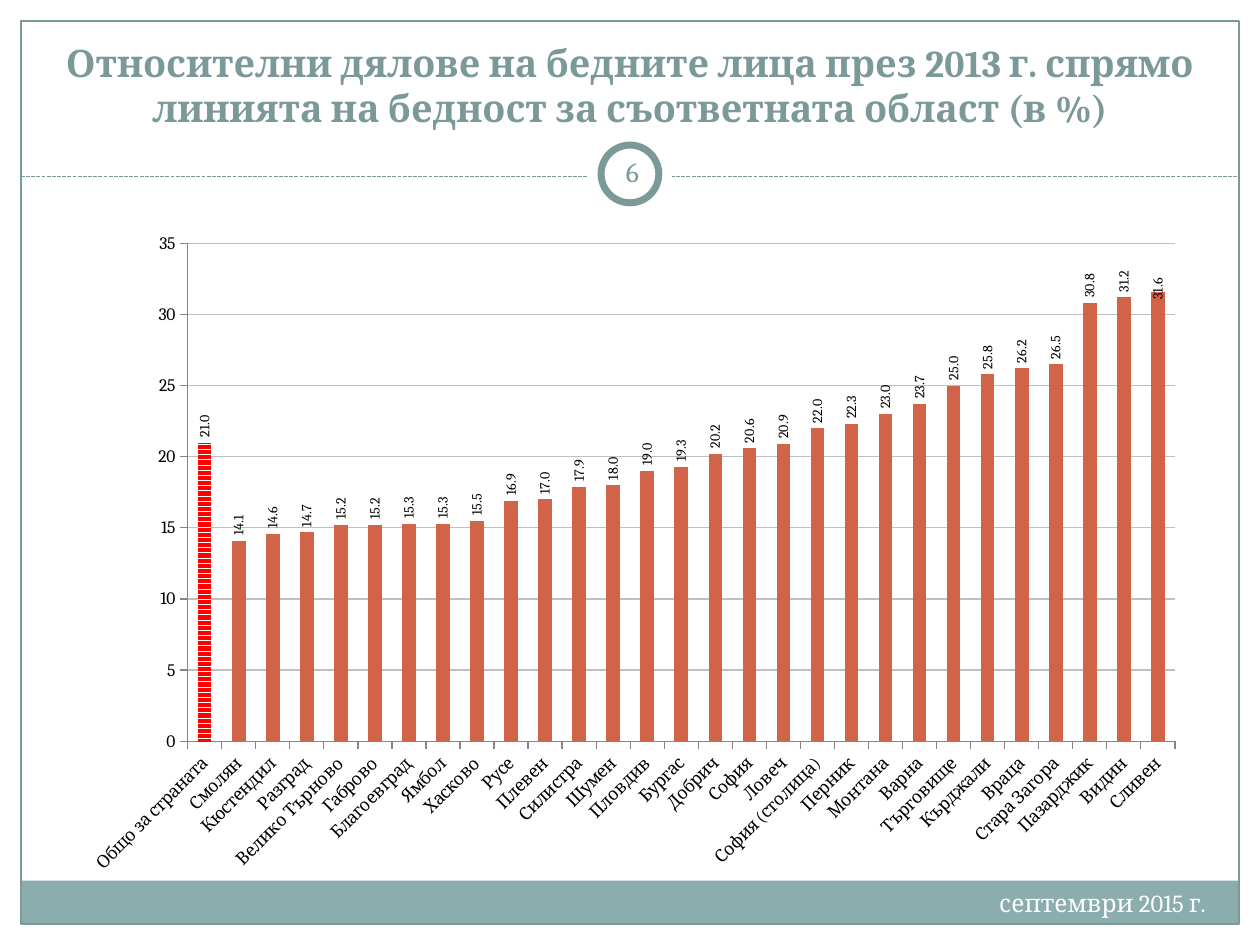
"""Build a slide with a column chart of relative poverty shares by Bulgarian district."""
from dataclasses import dataclass

from lxml import etree
from pptx import Presentation
from pptx.chart import data as chart_data
from pptx.dml.color import RGBColor
from pptx.enum import chart as ch, dml, shapes, text
from pptx.oxml import parse_xml
from pptx.oxml.ns import nsdecls, qn
from pptx.util import Pt

TITLE = ("Относителни дялове на бедните лица през 2013 г. спрямо "
         "линията на бедност за съответната област (в %)")
PAGE_NUMBER = "6"
DATE = "септември 2015 г."
SHARES = [
    ("Общо за страната", 21), ("Смолян", 14.1), ("Кюстендил", 14.6),
    ("Разград", 14.7), ("Велико Търново", 15.2), ("Габрово", 15.2),
    ("Благоевград", 15.3), ("Ямбол", 15.3), ("Хасково", 15.5),
    ("Русе", 16.9), ("Плевен", 17), ("Силистра", 17.9), ("Шумен", 18),
    ("Пловдив", 19), ("Бургас", 19.3), ("Добрич", 20.2), ("София", 20.6),
    ("Ловеч", 20.9), ("София (столица)", 22), ("Перник", 22.3),
    ("Монтана", 23), ("Варна", 23.7), ("Търговище", 25),
    ("Кърджали", 25.8), ("Враца", 26.2), ("Стара Загора", 26.5),
    ("Пазарджик", 30.8), ("Видин", 31.2), ("Сливен", 31.6),
]


@dataclass(frozen=True)
class Theme:
    font: str = "Cambria"
    accent: str = "7C999A"
    band: str = "8CADAE"
    white: str = "FFFFFF"
    black: str = "000000"
    column: str = "D16349"
    total: str = "FF0000"
    grid: str = "BFBFBF"
    axis: str = "868686"
    title_size: float = 21.6
    number_size: float = 16
    date_size: float = 14
    axis_size: float = 10
    label_size: float = 8


THEME = Theme()
WIDTH, HEIGHT, MARGIN = 720, 540, 12
RULE_Y = 100.8
RING_CENTRE = (360, 99.4)


def rgb(value):
    return RGBColor.from_string(value)


def style_font(font, size, color, bold=False):
    font.name, font.size, font.bold = THEME.font, Pt(size), bold
    font.color.rgb = rgb(color)


def style_line(line, color, width=0.75):
    line.color.rgb, line.width = rgb(color), Pt(width)


def add_shape(page, kind, area, fill=None, line=None, width=0.75):
    shape = page.shapes.add_shape(kind, *map(Pt, area))
    shape.shadow.inherit = False
    if fill:
        shape.fill.solid()
        shape.fill.fore_color.rgb = rgb(fill)
    else:
        shape.fill.background()
    if line:
        style_line(shape.line, line, width)
    else:
        shape.line.fill.background()


def add_disc(page, size, **style):
    x, y = RING_CENTRE
    add_shape(page, shapes.MSO_SHAPE.OVAL,
              (x - size / 2, y - size / 2, size, size), THEME.white, **style)


def write(box, words, align, anchor, size, color, bold=False):
    frame = box.text_frame
    frame.word_wrap, frame.vertical_anchor = True, anchor
    frame.text = words
    para = frame.paragraphs[0]
    para.alignment = align
    style_font(para.font, size, color, bold)
    return frame


def add_frame(page):
    rectangle = shapes.MSO_SHAPE.RECTANGLE
    inner = WIDTH - 2 * MARGIN
    add_shape(page, rectangle, (MARGIN, 503.3, inner, 24.5), THEME.band)
    add_shape(page, rectangle, (MARGIN, MARGIN, inner, HEIGHT - 2 * MARGIN),
              line=THEME.accent)
    rule = page.shapes.add_connector(
        shapes.MSO_CONNECTOR.STRAIGHT, Pt(MARGIN), Pt(RULE_Y),
        Pt(WIDTH - MARGIN), Pt(RULE_Y))
    style_line(rule.line, THEME.accent)
    rule.line.dash_style = dml.MSO_LINE.SQUARE_DOT
    etree.SubElement(rule._element.spPr, qn("a:effectLst"))
    add_disc(page, 48)
    add_disc(page, 33, line=THEME.accent, width=4)


def add_texts(page):
    align, anchor = text.PP_ALIGN, text.MSO_ANCHOR
    title = page.shapes.title
    title.left, title.top, title.width, title.height = map(Pt, (24, 18, 672, 60))
    frame = write(title, TITLE, align.CENTER, anchor.BOTTOM,
                  THEME.title_size, THEME.accent, True)
    frame.auto_size = text.MSO_AUTO_SIZE.NONE

    number = page.shapes.add_textbox(*map(Pt, (343.4, 80.8, 36, 34.6)))
    frame = write(number, PAGE_NUMBER, align.CENTER, anchor.MIDDLE,
                  THEME.number_size, THEME.accent)
    frame.margin_left = frame.margin_right = Pt(3.6)
    frame.margin_top = frame.margin_bottom = Pt(3.6)

    date = page.shapes.add_textbox(*map(Pt, (456, 504, 240, 28.8)))
    write(date, DATE, align.RIGHT, anchor.TOP, THEME.date_size, THEME.white)


def manual_layout(**settings):
    items = "".join(f'<c:{key} val="{value}"/>' for key, value in settings.items())
    return parse_xml(f'<c:layout {nsdecls("c")}><c:manualLayout>{items}'
                     '</c:manualLayout></c:layout>')


def style_axes(chart):
    for axis in (chart.category_axis, chart.value_axis):
        axis.major_tick_mark = ch.XL_TICK_MARK.OUTSIDE
        axis.minor_tick_mark = ch.XL_TICK_MARK.NONE
        style_line(axis.format.line, THEME.axis)
        style_font(axis.tick_labels.font, THEME.axis_size, THEME.black)
    chart.category_axis._element.find(".//" + qn("a:bodyPr")).set("rot", "-2700000")
    values = chart.value_axis
    values.minimum_scale, values.maximum_scale, values.major_unit = 0, 35, 5
    values.tick_labels.number_format = "0"
    values.tick_labels.number_format_is_linked = False
    values.has_major_gridlines = True
    style_line(values.major_gridlines.format.line, THEME.grid)


def style_labels(series):
    labels = series.data_labels
    labels.show_value = True
    labels.number_format, labels.number_format_is_linked = "0.0", False
    labels.position = ch.XL_LABEL_POSITION.OUTSIDE_END
    style_font(labels.font, THEME.label_size, THEME.black)
    last = len(SHARES) - 1
    style_font(series.points[last].data_label.font, THEME.label_size, THEME.black)
    last_label = labels._element.find(qn("c:dLbl"))
    last_label.insert(1, manual_layout(x=0, y=0.02))
    for body in labels._element.iter(qn("a:bodyPr")):
        body.set("rot", "-5400000")
        body.set("vert", "horz")


def add_share_chart(page):
    content = chart_data.CategoryChartData(number_format="0.0")
    content.categories = [name for name, _ in SHARES]
    content.add_series("Series 1", [share for _, share in SHARES])
    chart = page.shapes.add_chart(
        ch.XL_CHART_TYPE.COLUMN_CLUSTERED, *map(Pt, (42.5, 128.2, 629.3, 374.4)),
        content).chart
    chart.has_legend = chart.has_title = False
    style_font(chart.font, THEME.axis_size, THEME.black)
    style_axes(chart)

    plot = chart.plots[0]
    plot.gap_width, plot.vary_by_categories = 150, False
    series = plot.series[0]
    series.format.fill.solid()
    series.format.fill.fore_color.rgb = rgb(THEME.column)
    total = series.points[0].format.fill
    total.patterned()
    total.pattern = dml.MSO_PATTERN.DARK_HORIZONTAL
    total.fore_color.rgb, total.back_color.rgb = rgb(THEME.total), rgb(THEME.white)
    style_labels(series)

    area = chart._chartSpace.find(".//" + qn("c:plotArea"))
    for old in area.findall(qn("c:layout")):
        area.remove(old)
    area.insert(0, manual_layout(layoutTarget="inner", xMode="edge", yMode="edge",
                                 x=0.103, y=0.029, w=0.897, h=0.76))


def main():
    deck = Presentation()
    deck.slide_width, deck.slide_height = Pt(WIDTH), Pt(HEIGHT)
    page = deck.slides.add_slide(deck.slide_layouts[5])
    add_frame(page)
    add_texts(page)
    add_share_chart(page)
    deck.save("out.pptx")


if __name__ == "__main__":
    main()
